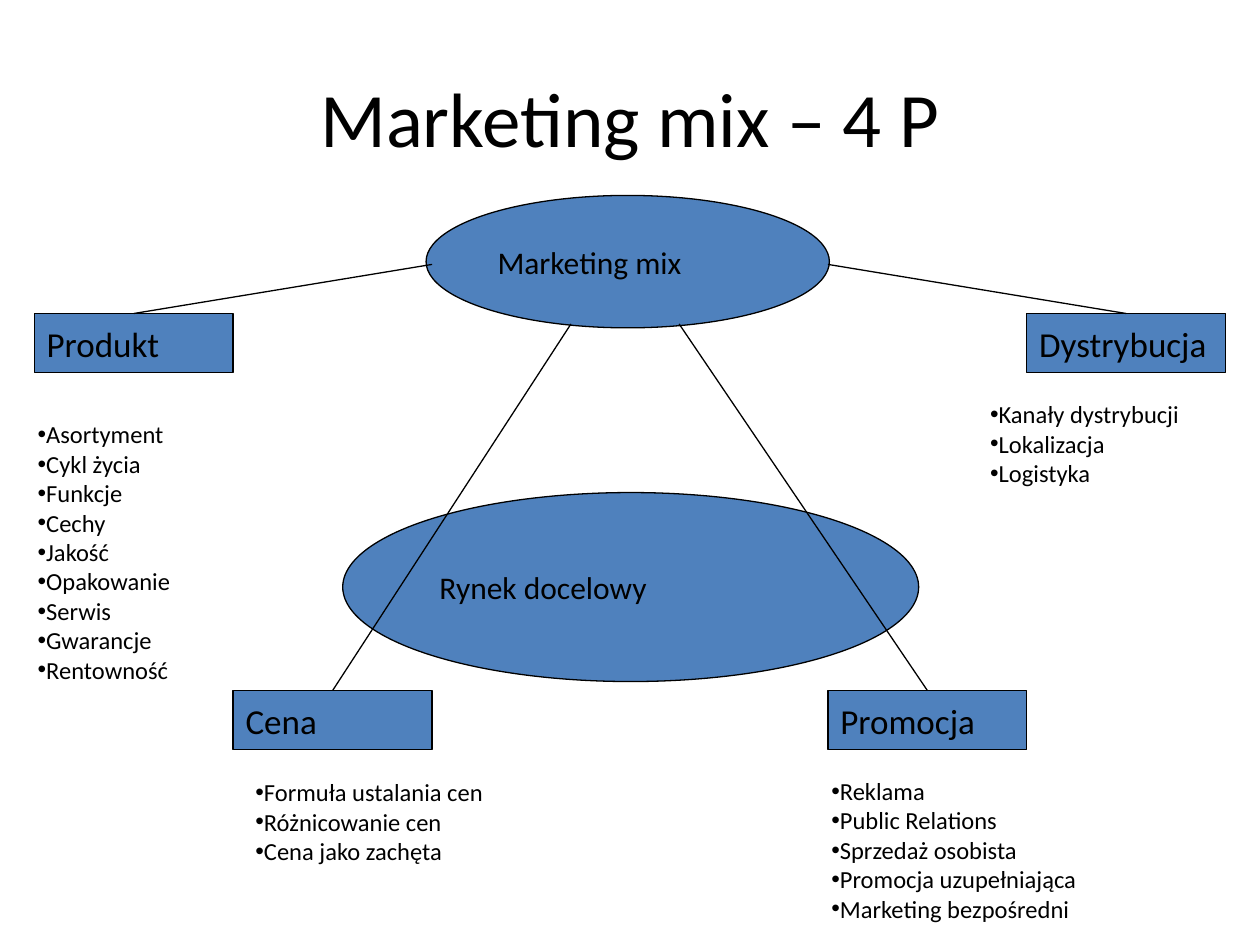
"""Build the 4 P marketing mix slide."""
from lxml import etree
from pptx import Presentation, util as u
from pptx.dml.color import RGBColor
from pptx.enum import shapes, text
from pptx.oxml.ns import qn

TITLE = "Marketing mix – 4 P"
FONT, INK, BLUE = "Calibri", "000000", "4F81BD"
BOX_SIZE = (4.01, 1.19)

OVALS = [
    ("Rynek docelowy", (6.91, 9.93, 11.61, 3.81)),
    ("Marketing mix", (8.59, 3.94, 8.13, 2.67)),
]
PILLARS = [
    {"name": "Produkt", "box": (0.69, 6.32), "joint": (8.71, 5.33),
     "list": (0.51, 8.33, 4.19, 5.56),
     "items": ["Asortyment", "Cykl życia", "Funkcje", "Cechy", "Jakość",
               "Opakowanie", "Serwis", "Gwarancje", "Rentowność"]},
    {"name": "Dystrybucja", "box": (20.7, 6.32), "joint": (16.69, 5.33),
     "list": (19.71, 7.92, 6.2, 2.03),
     "items": ["Kanały dystrybucji", "Lokalizacja", "Logistyka"]},
    {"name": "Cena", "box": (4.7, 13.92), "joint": (11.51, 6.53),
     "list": (4.9, 15.54, 6.2, 2.03),
     "items": ["Formuła ustalania cen", "Różnicowanie cen", "Cena jako zachęta"]},
    {"name": "Promocja", "box": (16.69, 13.92), "joint": (13.69, 6.53),
     "list": (16.51, 15.52, 6.2, 3.2),
     "items": ["Reklama", "Public Relations", "Sprzedaż osobista",
               "Promocja uzupełniająca", "Marketing bezpośredni"]},
]


def cm(values):
    return [u.Cm(value) for value in values]


def paint(color_format, color):
    color_format.rgb = RGBColor.from_string(color)


def write(frame, lines, size, align=text.PP_ALIGN.LEFT):
    frame.text = "\n".join(lines)
    for paragraph in frame.paragraphs:
        paragraph.alignment = align
        for run in paragraph.runs:
            run.font.name, run.font.size = FONT, u.Pt(size)
            paint(run.font.color, INK)


def outline(line):
    line.width = u.Pt(0.75)
    paint(line.color, INK)


def add_node(slide, kind, label, place, size):
    node = slide.shapes.add_shape(kind, *cm(place))
    node.shadow.inherit = False
    node.fill.solid()
    paint(node.fill.fore_color, BLUE)
    outline(node.line)
    node.text_frame.word_wrap = False
    node.text_frame.vertical_anchor = text.MSO_ANCHOR.MIDDLE
    write(node.text_frame, [label], size)


def add_list(slide, items, place):
    frame = slide.shapes.add_textbox(*cm(place)).text_frame
    frame.word_wrap = True
    frame.auto_size = text.MSO_AUTO_SIZE.SHAPE_TO_FIT_TEXT
    write(frame, items, 14)
    for paragraph in frame.paragraphs:
        properties = paragraph._p.get_or_add_pPr()
        etree.SubElement(properties, qn("a:buFont"), typeface="Arial")
        etree.SubElement(properties, qn("a:buChar"), char="•")


def add_link(slide, box, joint):
    top_centre = (box[0] + BOX_SIZE[0] / 2, box[1])
    link = slide.shapes.add_connector(
        shapes.MSO_CONNECTOR.STRAIGHT, *cm(top_centre + joint))
    outline(link.line)
    etree.SubElement(link._element.spPr, qn("a:effectLst"))


def main():
    deck = Presentation()
    deck.slide_width, deck.slide_height = cm((25.4, 19.05))
    slide = deck.slides.add_slide(deck.slide_layouts[5])

    title = slide.shapes.title
    title.left, title.top, title.width, title.height = cm((1.27, 0.76, 22.86, 3.18))
    title.text_frame.vertical_anchor = text.MSO_ANCHOR.MIDDLE
    write(title.text_frame, [TITLE], 44, text.PP_ALIGN.CENTER)

    for label, place in OVALS:
        add_node(slide, shapes.MSO_SHAPE.OVAL, label, place, 18)
    for pillar in PILLARS:
        add_node(slide, shapes.MSO_SHAPE.RECTANGLE, pillar["name"],
                 pillar["box"] + BOX_SIZE, 20)
    for pillar in PILLARS:
        add_list(slide, pillar["items"], pillar["list"])
    for pillar in PILLARS:
        add_link(slide, pillar["box"], pillar["joint"])

    deck.save("out.pptx")


if __name__ == "__main__":
    main()
